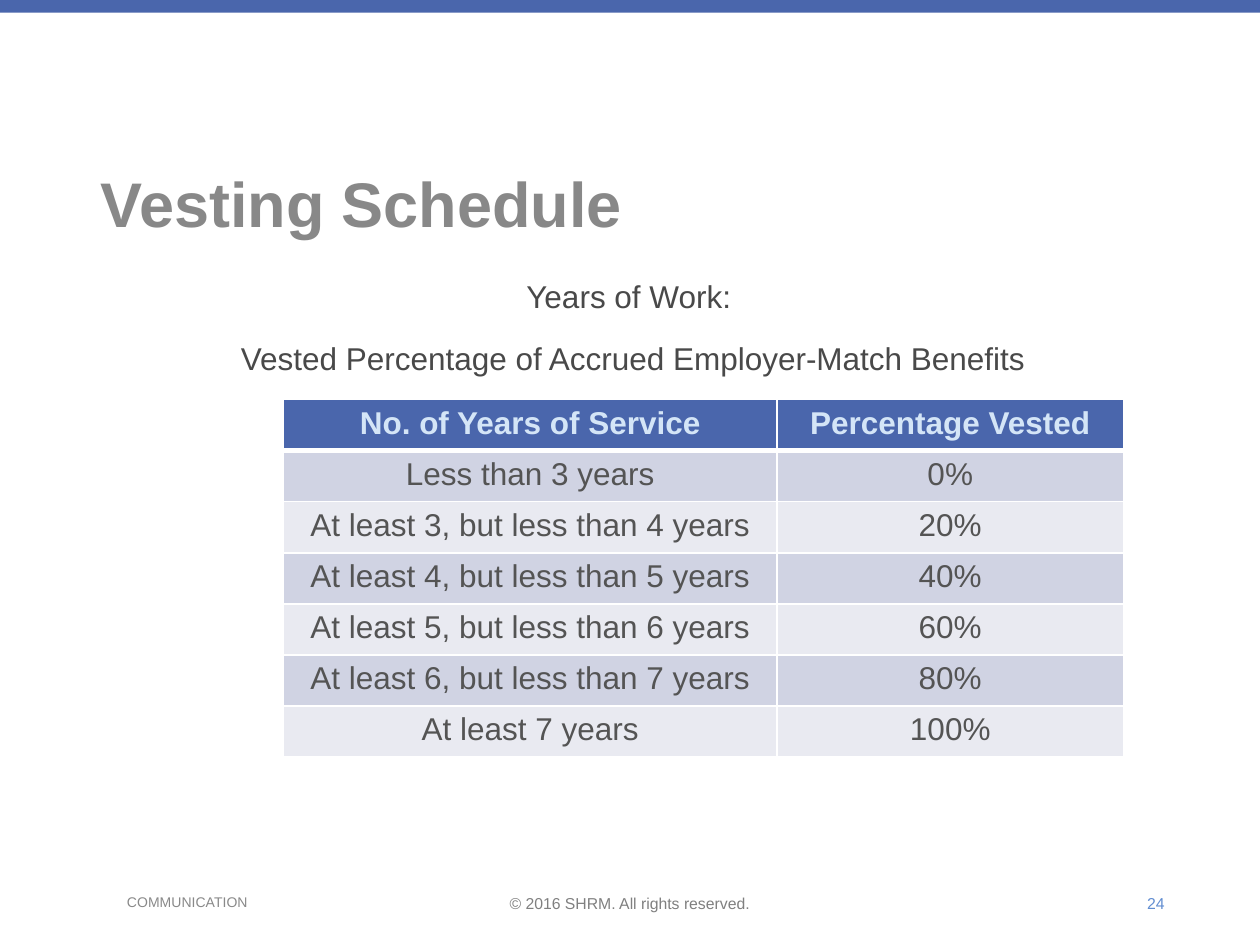
from dataclasses import dataclass

from lxml.etree import SubElement
from pptx import Presentation
from pptx.dml.color import RGBColor as Rgb
from pptx.enum.shapes import MSO_SHAPE as Shape
from pptx.enum.text import MSO_ANCHOR as Anchor, PP_ALIGN as Align
from pptx.oxml.ns import qn
from pptx.util import Pt


@dataclass(frozen=True)
class Theme:
    font: str = "Arial"
    accent: str = "4A66AC"
    title: str = "888888"
    body: str = "494949"
    section: str = "898989"
    copyright: str = "808080"
    number: str = "618DD1"
    header_text: str = "D4E5F7"
    cell_text: str = "545454"
    bands: tuple = ("D0D3E3", "E9EAF1")
    border: str = "FFFFFF"
    title_size: int = 36
    body_size: int = 18
    footer_size: int = 9
    section_size: int = 8


THEME = Theme()

VESTING = [
    ("No. of Years of Service", "Percentage Vested"),
    ("Less than 3 years", "0%"),
    ("At least 3, but less than 4 years", "20%"),
    ("At least 4, but less than 5 years", "40%"),
    ("At least 5, but less than 6 years", "60%"),
    ("At least 6, but less than 7 years", "80%"),
    ("At least 7 years", "100%"),
]


def style(paragraph, size, color, align, bold=False):
    paragraph.alignment = align
    font = paragraph.font
    font.name, font.size, font.bold = THEME.font, Pt(size), bold
    font.color.rgb = Rgb.from_string(color)


def add_text(slide, bounds, lines, size, color, align=Align.LEFT,
             anchor=Anchor.TOP, bold=False):
    frame = slide.shapes.add_textbox(*map(Pt, bounds)).text_frame
    frame.word_wrap = True
    frame.vertical_anchor = anchor
    frame.text = "\n".join(lines)
    for paragraph in frame.paragraphs:
        style(paragraph, size, color, align, bold)
    return frame.paragraphs


def add_band(slide, bounds):
    band = slide.shapes.add_shape(Shape.RECTANGLE, *map(Pt, bounds))
    band.shadow.inherit = False
    band.fill.solid()
    band.fill.fore_color.rgb = Rgb.from_string(THEME.accent)
    band.line.fill.background()


def set_borders(cell, **widths):
    properties = cell._tc.get_or_add_tcPr()
    for side in "LRTB":
        line = SubElement(properties, qn(f"a:ln{side}"), w=str(Pt(widths.get(side, 1))))
        fill = SubElement(line, qn("a:solidFill"))
        SubElement(fill, qn("a:srgbClr"), val=THEME.border)


def add_schedule(slide, left, top, column_widths, row_height):
    table = slide.shapes.add_table(
        len(VESTING), len(column_widths), Pt(left), Pt(top),
        Pt(sum(column_widths)), Pt(row_height * len(VESTING))).table
    for column, width in zip(table.columns, column_widths):
        column.width = Pt(width)
    for index, (row, entries) in enumerate(zip(table.rows, VESTING)):
        row.height = Pt(row_height)
        header = index == 0
        fill = THEME.accent if header else THEME.bands[(index - 1) % 2]
        color = THEME.header_text if header else THEME.cell_text
        for cell, entry in zip(row.cells, entries):
            cell.text = entry
            style(cell.text_frame.paragraphs[0], THEME.body_size, color, Align.CENTER, header)
            set_borders(cell, T=3 if index == 1 else 1, B=3 if header else 1)
            cell.fill.solid()
            cell.fill.fore_color.rgb = Rgb.from_string(fill)


def main():
    deck = Presentation()
    deck.slide_width, deck.slide_height = Pt(720), Pt(540)
    slide = deck.slides.add_slide(deck.slide_layouts[6])

    add_band(slide, (0, 0, 720, 7.2))
    add_text(slide, (65.5, 507, 180, 17), ["COMMUNICATION"],
             THEME.section_size, THEME.section)
    add_text(slide, (238.5, 507, 242.5, 18), ["© 2016 SHRM. All rights reserved."],
             THEME.footer_size, THEME.copyright, Align.CENTER)

    title, = add_text(slide, (50.4, 50.4, 622.8, 90), ["Vesting Schedule"],
                      THEME.title_size, THEME.title, anchor=Anchor.BOTTOM, bold=True)
    title.line_spacing = 0.8

    years, benefits = add_text(
        slide, (50.4, 154.8, 622.8, 324),
        ["Years of Work: ", "Vested Percentage of Accrued Employer-Match Benefits"],
        THEME.body_size, THEME.body, Align.CENTER)
    years.space_after = benefits.space_after = Pt(6)
    benefits.space_before = Pt(7.5)

    add_text(slide, (579.6, 507, 93, 18), ["24"], THEME.footer_size, THEME.number,
             Align.RIGHT, Anchor.MIDDLE)
    add_schedule(slide, 162, 228.3, (282, 198), 29.2)

    deck.save("out.pptx")


if __name__ == "__main__":
    main()
